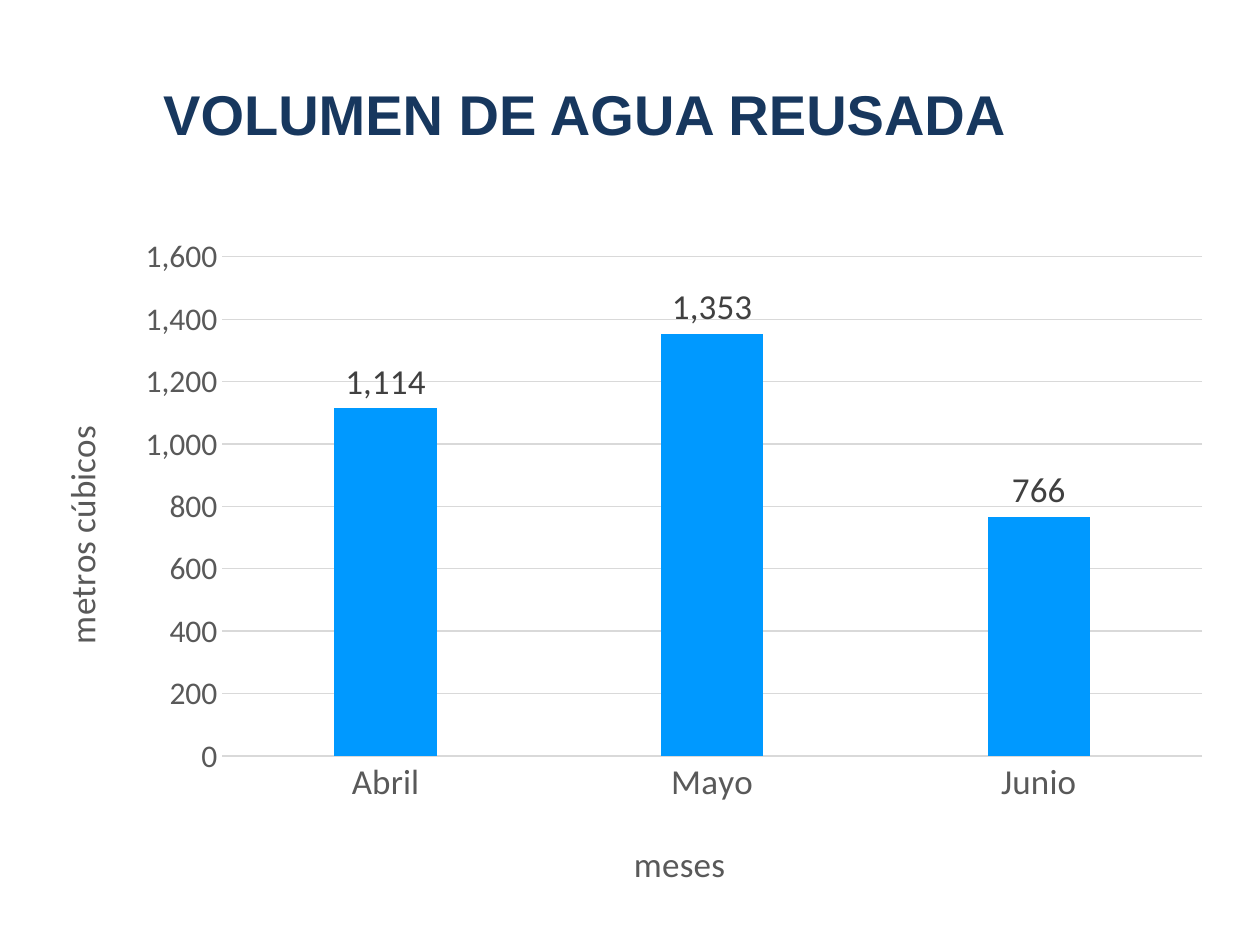
from dataclasses import dataclass

from pptx import Presentation
from pptx.chart.data import CategoryChartData
from pptx.dml.color import RGBColor
from pptx.enum.chart import XL_CHART_TYPE as ChartType
from pptx.enum.chart import XL_LABEL_POSITION as LabelPosition
from pptx.enum.chart import XL_TICK_MARK as TickMark
from pptx.enum.text import MSO_ANCHOR as Anchor
from pptx.enum.text import PP_ALIGN as Align
from pptx.oxml import parse_xml
from pptx.oxml.ns import nsdecls, qn
from pptx.util import Inches, Pt


@dataclass(frozen=True)
class Theme:
    title_font: str = "Arial"
    chart_font: str = "Calibri"
    title_size: int = 32
    chart_size: int = 20
    scale_size: int = 18
    navy: str = "17375E"
    bar: str = "0099FF"
    axis_text: str = "595959"
    label_text: str = "404040"
    grid: str = "D9D9D9"
    line_width: float = 0.75


def style_font(font, name, size, color, bold=False):
    font.name, font.size, font.bold = name, Pt(size), bold
    font.color.rgb = RGBColor.from_string(color)


def make_layout(x, y, width=None, height=None):
    """Fixed chart layout, in fractions of the chart frame."""
    values = {"xMode": "edge", "yMode": "edge", "x": x, "y": y}
    if width:
        values = {"layoutTarget": "inner", **values, "w": width, "h": height}
    items = "".join(f'<c:{tag} val="{value}"/>' for tag, value in values.items())
    return parse_xml(
        f'<c:layout {nsdecls("c")}><c:manualLayout>{items}</c:manualLayout></c:layout>')


def drop_layout(parent):
    for layout in parent.findall(qn("c:layout")):
        parent.remove(layout)


class SlideBuilder:
    def __init__(self, page, theme):
        self.page, self.theme = page, theme

    def add_title(self, text, left, top, width, height):
        box = self.page.shapes.add_textbox(
            Inches(left), Inches(top), Inches(width), Inches(height))
        frame = box.text_frame
        frame.word_wrap = True
        frame.vertical_anchor = Anchor.MIDDLE
        para = frame.paragraphs[0]
        para.text, para.alignment = text, Align.CENTER
        style_font(para.font, self.theme.title_font, self.theme.title_size,
                   self.theme.navy, bold=True)

    def style_line(self, line):
        line.color.rgb = RGBColor.from_string(self.theme.grid)
        line.width = Pt(self.theme.line_width)

    def style_axis(self, axis, title, size, x, y):
        theme = self.theme
        axis.major_tick_mark = axis.minor_tick_mark = TickMark.NONE
        style_font(axis.tick_labels.font, theme.chart_font, size, theme.axis_text)
        para = axis.axis_title.text_frame.paragraphs[0]
        para.text = title
        style_font(para.font, theme.chart_font, theme.chart_size, theme.axis_text)
        element = axis.axis_title._element
        drop_layout(element)
        element.find(qn("c:tx")).addnext(make_layout(x, y))

    def add_columns(self, categories, values, left, top, width, height):
        theme = self.theme
        data = CategoryChartData(number_format="#,##0")
        data.categories = categories
        data.add_series("Series 1", values)
        chart = self.page.shapes.add_chart(
            ChartType.COLUMN_CLUSTERED, Inches(left), Inches(top),
            Inches(width), Inches(height), data).chart
        chart.has_legend = chart.has_title = False
        style_font(chart.font, theme.chart_font, theme.chart_size, "000000")

        # Plot area and columns
        plot_area = chart._chartSpace.chart.plotArea
        drop_layout(plot_area)
        plot_area.insert(0, make_layout(0.157, 0.048, 0.822, 0.735))
        plot = chart.plots[0]
        plot.gap_width, plot.overlap = 219, -27
        plot.vary_by_categories = False
        fill = plot.series[0].format.fill
        fill.solid()
        fill.fore_color.rgb = RGBColor.from_string(theme.bar)

        # Value labels
        labels = plot.series[0].data_labels
        labels.show_value = True
        labels.position = LabelPosition.OUTSIDE_END
        labels.number_format, labels.number_format_is_linked = "#,##0", False
        style_font(labels.font, theme.chart_font, theme.chart_size, theme.label_text)

        # Axes
        months, volume = chart.category_axis, chart.value_axis
        self.style_axis(months, "meses", theme.chart_size, 0.497, 0.896)
        self.style_axis(volume, "metros cúbicos", theme.scale_size, 0.013, 0.287)
        self.style_line(months.format.line)
        volume.format.line.fill.background()
        volume.minimum_scale, volume.maximum_scale, volume.major_unit = 0, 1600, 200
        volume.tick_labels.number_format = "#,##0"
        volume.tick_labels.number_format_is_linked = False
        volume.has_major_gridlines = True
        self.style_line(volume.major_gridlines.format.line)


def main():
    deck = Presentation()
    deck.slide_width, deck.slide_height = Inches(10), Inches(7.5)
    page = deck.slides.add_slide(deck.slide_layouts[6])
    builder = SlideBuilder(page, Theme())
    builder.add_title("VOLUMEN DE AGUA REUSADA ", 0.28, 0.36, 8.83, 1.07)
    builder.add_columns(["Abril", "Mayo", "Junio"], [1114, 1353, 766],
                        0.28, 1.78, 9.46, 5.39)
    deck.save("out.pptx")


if __name__ == "__main__":
    main()
